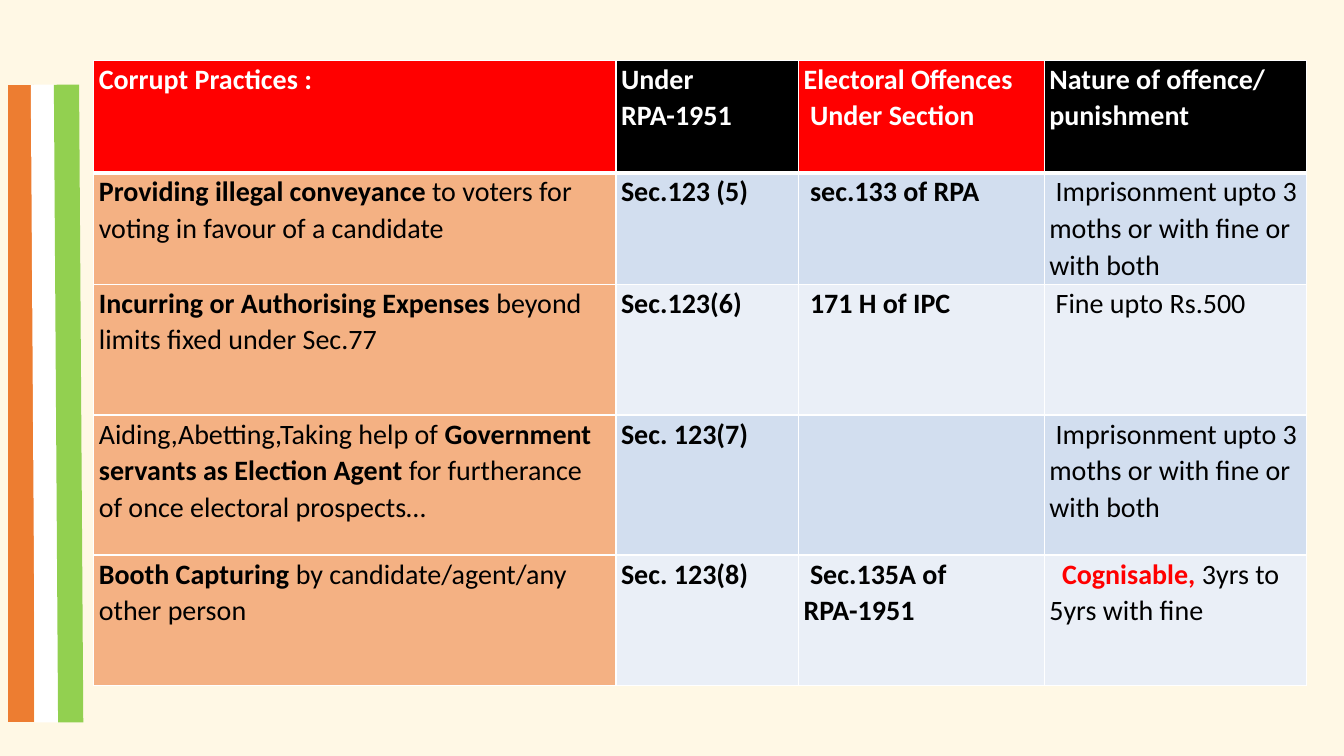
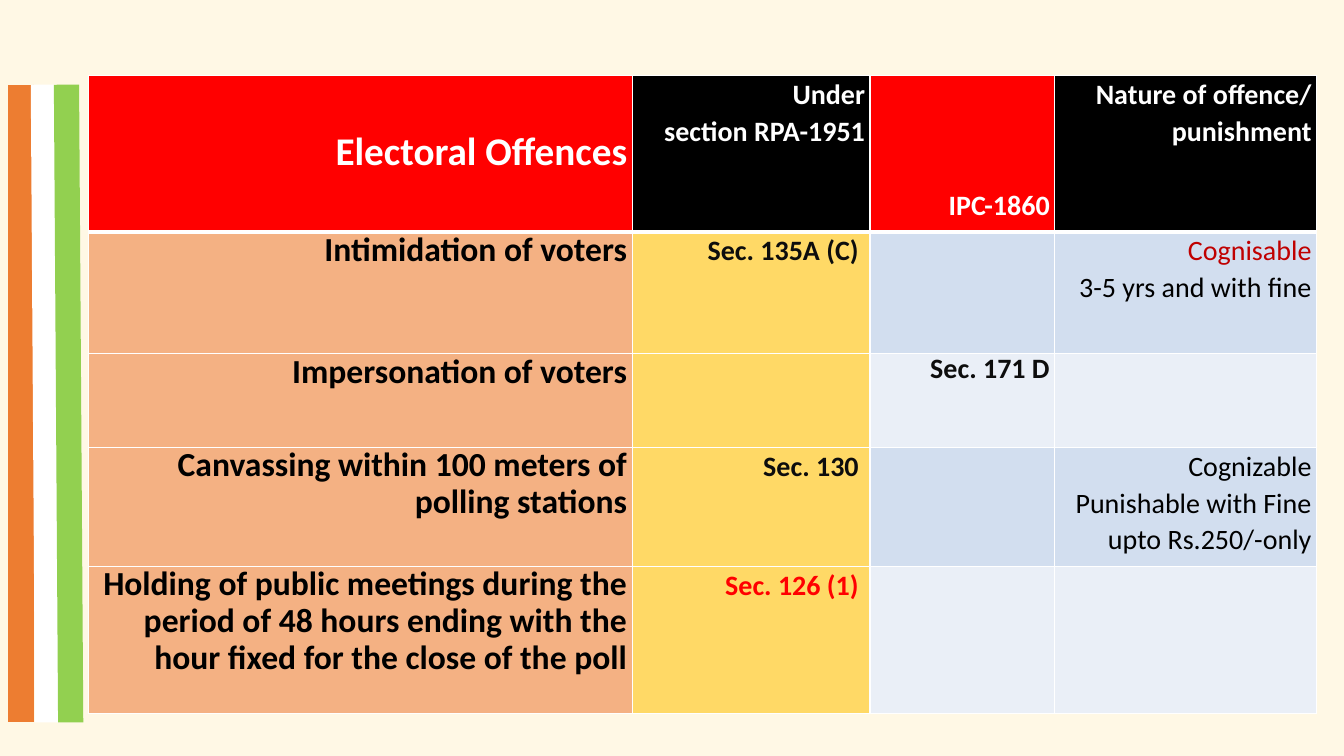
"""Build two slides of tables on corrupt practices and electoral offences."""
import dataclasses

import lxml.etree
import pptx
import pptx.dml.color
import pptx.enum.shapes
import pptx.enum.text
import pptx.oxml.ns
import pptx.util

Pt = pptx.util.Pt
ALIGN = pptx.enum.text.PP_ALIGN
ANCHOR = pptx.enum.text.MSO_ANCHOR
qn = pptx.oxml.ns.qn

FONT = "Calibri"
CREAM, WHITE, BLACK, INK = "FFF8E5", "FFFFFF", "000000", "0D0D0D"
RED, DARK_RED, PEACH, GOLD = "FF0000", "C00000", "F4B183", "FFD966"
HEADER_FILLS = (RED, BLACK)
BAND_FILLS = ("EAEFF7", "D2DEEF")
STRIPES = (("ED7D31", 15, 15), (WHITE, 31, 34), ("92D050", 47.5, 50.5))
STRIPE_TOP, STRIPE_BOTTOM, STRIPE_WIDTH = 60.5, 516, 18
SIDE_MARGIN = 3.6
SPACE = 4.5


@dataclasses.dataclass
class Cell:
    paragraphs: list
    indent: float = 0
    size: float = 20
    spacing: float = 1.07
    align: object = ALIGN.LEFT
    anchor: object = ANCHOR.TOP
    right: float = SIDE_MARGIN
    bottom: float = 0


def rgb(color):
    return pptx.dml.color.RGBColor.from_string(color)


def bold(text, color=BLACK):
    return text, True, color


def plain(text, color=BLACK):
    return text, False, color


def line_cell(*runs, **options):
    return Cell([runs], **options)


def header(*lines, **options):
    return Cell([[bold(line, WHITE)] for line in lines], **options)


def right_header(*lines, **options):
    return header(*lines, align=ALIGN.RIGHT, **options)


def offence(text):
    return line_cell(bold(text), size=24, spacing=0.9, align=ALIGN.RIGHT)


def section(text, color=INK):
    return line_cell(bold(text, color), align=ALIGN.RIGHT, right=SIDE_MARGIN + SPACE)


def punishment(*runs):
    return Cell([[run] for run in runs], align=ALIGN.RIGHT)


def empty():
    return Cell([])


def add_stripes(slide):
    for color, top_x, bottom_x in STRIPES:
        stripe = slide.shapes.add_connector(
            pptx.enum.shapes.MSO_CONNECTOR.STRAIGHT,
            Pt(top_x), Pt(STRIPE_TOP), Pt(bottom_x), Pt(STRIPE_BOTTOM))
        stripe.line.color.rgb = rgb(color)
        stripe.line.width = Pt(STRIPE_WIDTH)
        lxml.etree.SubElement(stripe._element.spPr, qn("a:effectLst"))


def add_slide(presentation):
    slide = presentation.slides.add_slide(presentation.slide_layouts[6])
    slide.background.fill.solid()
    slide.background.fill.fore_color.rgb = rgb(CREAM)
    add_stripes(slide)
    return slide


def set_borders(table_cell, row):
    properties = table_cell._tc.get_or_add_tcPr()
    widths = {"L": 1, "R": 1, "T": 3 if row == 1 else 1, "B": 3 if row == 0 else 1}
    for side, width in widths.items():
        border = lxml.etree.SubElement(properties, qn(f"a:ln{side}"), w=str(Pt(width)))
        fill = lxml.etree.SubElement(border, qn("a:solidFill"))
        lxml.etree.SubElement(fill, qn("a:srgbClr"), val=WHITE)


def write_text(text_frame, content):
    for index, runs in enumerate(content.paragraphs):
        paragraph = text_frame.add_paragraph() if index else text_frame.paragraphs[0]
        paragraph.alignment = content.align
        paragraph.line_spacing = content.spacing
        for text, is_bold, color in runs:
            run = paragraph.add_run()
            run.text = text
            run.font.name = FONT
            run.font.size = Pt(content.size)
            run.font.bold = is_bold
            run.font.color.rgb = rgb(color)
    if content.indent:
        paragraph._p.get_or_add_pPr().set("indent", str(Pt(content.indent)))


def fill_cell(table_cell, content, row, color):
    table_cell.margin_left = Pt(SIDE_MARGIN)
    table_cell.margin_right = Pt(content.right)
    table_cell.margin_top = Pt(0)
    table_cell.margin_bottom = Pt(content.bottom)
    table_cell.vertical_anchor = content.anchor
    set_borders(table_cell, row)
    table_cell.fill.solid()
    table_cell.fill.fore_color.rgb = rgb(color)
    write_text(table_cell.text_frame, content)


def add_table(slide, left, top, widths, heights, column_fills, rows):
    table = slide.shapes.add_table(
        len(heights), len(widths), Pt(left), Pt(top),
        Pt(sum(widths)), Pt(sum(heights))).table
    for column, width in zip(table.columns, widths):
        column.width = Pt(width)
    for table_row, height in zip(table.rows, heights):
        table_row.height = Pt(height)
    for row, contents in enumerate(rows):
        for column, content in enumerate(contents):
            if row == 0:
                color = HEADER_FILLS[column % 2]
            else:
                color = column_fills.get(column, BAND_FILLS[row % 2])
            fill_cell(table.cell(row, column), content, row, color)


def add_corrupt_practices(presentation):
    rows = [
        [header("Corrupt Practices :"),
         header("Under RPA-1951"),
         header("Electoral Offences", "Under Section", indent=SPACE),
         header("Nature of offence/", "punishment")],
        [line_cell(bold("Providing illegal conveyance "),
                   plain("to voters for voting in favour of a candidate")),
         line_cell(bold("Sec.123 (5)")),
         line_cell(bold("sec.133 of RPA"), indent=SPACE),
         line_cell(plain("Imprisonment upto 3 moths or with fine or with both"),
                   indent=SPACE)],
        [line_cell(bold("Incurring or Authorising Expenses "),
                   plain("beyond limits fixed under Sec.77")),
         line_cell(bold("Sec.123(6)")),
         line_cell(bold("171 H of IPC"), indent=SPACE),
         line_cell(plain("Fine upto Rs.500"), indent=SPACE)],
        [line_cell(plain("Aiding,Abetting,Taking help of "),
                   bold("Government servants as Election Agent "),
                   plain("for furtherance of once electoral prospects…")),
         line_cell(bold("Sec. 123(7)")),
         empty(),
         line_cell(plain("Imprisonment upto 3 moths or with fine or with both"),
                   indent=SPACE)],
        [line_cell(bold("Booth Capturing "),
                   plain("by candidate/agent/any other person")),
         line_cell(bold("Sec. 123(8)")),
         line_cell(bold("Sec.135A of RPA-1951"), indent=SPACE),
         line_cell(bold("Cognisable,", RED), plain(" 3yrs to 5yrs with fine"),
                   indent=2 * SPACE)],
    ]
    add_table(add_slide(presentation), 67, 43, (373, 130.5, 175.5, 187.5),
              (80.5, 79.5, 93.5, 100, 93.5), {0: PEACH}, rows)


def add_electoral_offences(presentation):
    rows = [
        [right_header("Electoral Offences", size=28, anchor=ANCHOR.MIDDLE, bottom=4),
         right_header("Under", "section RPA-1951"),
         right_header("IPC-1860", anchor=ANCHOR.BOTTOM, bottom=6),
         right_header("Nature of offence/", "punishment")],
        [offence("Intimidation of voters"),
         section("Sec. 135A (C)"),
         empty(),
         punishment(plain("Cognisable", DARK_RED), plain("3-5 yrs and with fine"))],
        [offence("Impersonation of voters"),
         empty(),
         line_cell(bold("Sec. 171 D", INK), spacing=0.9, align=ALIGN.RIGHT),
         empty()],
        [offence("Canvassing within 100 meters of polling stations"),
         section("Sec. 130"),
         empty(),
         punishment(plain("Cognizable"),
                    plain("Punishable with Fine upto Rs.250/-only"))],
        [offence("Holding of public meetings during the period of 48 hours "
                 "ending with the hour fixed for the close of the poll"),
         section("Sec. 126 (1)", RED),
         empty(),
         empty()],
    ]
    add_table(add_slide(presentation), 63, 54, (388.5, 170, 132, 187),
              (111.5, 87, 67, 85, 105), {0: PEACH, 1: GOLD}, rows)


def main():
    presentation = pptx.Presentation()
    presentation.slide_width = Pt(960)
    presentation.slide_height = Pt(540)
    add_corrupt_practices(presentation)
    add_electoral_offences(presentation)
    presentation.save("out.pptx")


if __name__ == "__main__":
    main()
